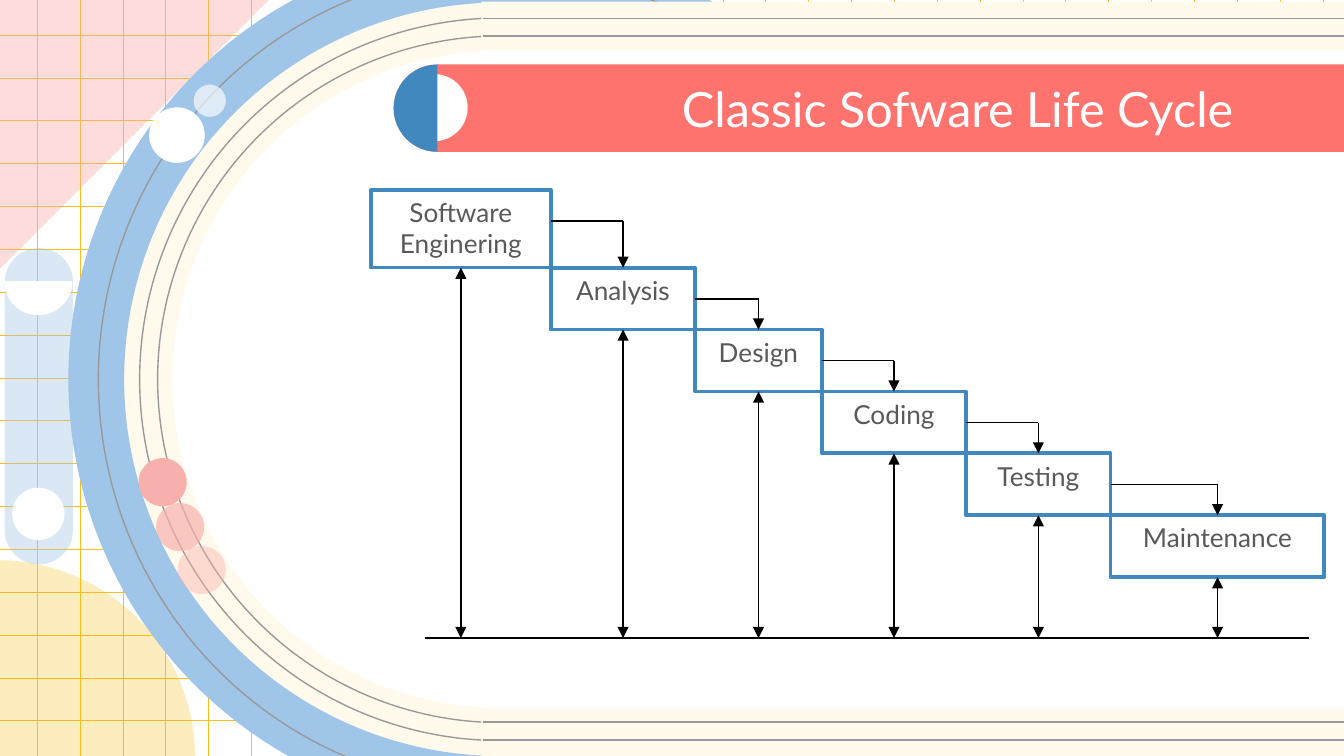
"""Build a slide showing the classic software life cycle as a descending staircase."""
import pptx
import pptx.dml.color
import pptx.enum.shapes
import pptx.enum.text
import pptx.oxml
import pptx.oxml.ns
import pptx.util

Cm = pptx.util.Cm
Pt = pptx.util.Pt
KIND = pptx.enum.shapes.MSO_SHAPE
ALIGN = pptx.enum.text.PP_ALIGN
ANCHOR = pptx.enum.text.MSO_ANCHOR

COLORS = {
    "white": "FFFFFF", "cream": "FFFAEB", "sky": "9FC5E8", "blue": "4088BE",
    "pink": "F8B0AD", "coral": "FF736E", "yellow": "FBBE18", "gray": "999999",
    "text": "595959", "black": "000000",
}
WIDTH, HEIGHT = 25.4, 14.29
STAGES = [
    ("Software Enginering", 3.40, 1.47), ("Analysis", 2.73, 1.17),
    ("Design", 2.39, 1.17), ("Coding", 2.73, 1.17),
    ("Testing", 2.73, 1.17), ("Maintenance", 4.04, 1.17),
]


def rgb(color):
    return pptx.dml.color.RGBColor.from_string(COLORS[color])


def apply(target, values):
    for name, value in values.items():
        setattr(target, name, value)


def add_element(parent, tag, **attributes):
    element = pptx.oxml.parse_xml(f"<a:{tag} {pptx.oxml.ns.nsdecls('a')}/>")
    for name, value in attributes.items():
        element.set(name, value)
    parent.append(element)


def add_figure(slide, kind, box, fill=None, alpha=100, line=None, weight=0.75, adjust=()):
    figure = slide.shapes.add_shape(kind, *map(Cm, box))
    figure.shadow.inherit = False
    for index, value in enumerate(adjust):
        figure.adjustments[index] = value
    if fill:
        figure.fill.solid()
        figure.fill.fore_color.rgb = rgb(fill)
        if alpha < 100:
            solid = figure.fill._xPr.find(pptx.oxml.ns.qn("a:solidFill"))
            add_element(solid[0], "alpha", val=str(alpha * 1000))
    else:
        figure.fill.background()
    if line:
        figure.line.color.rgb = rgb(line)
        figure.line.width = Pt(weight)
    else:
        figure.line.fill.background()
    return figure


def add_line(slide, start, end, color="black", weight=0.75, arrows=()):
    straight = pptx.enum.shapes.MSO_CONNECTOR.STRAIGHT
    stroke = slide.shapes.add_connector(straight, *map(Cm, (*start, *end)))
    stroke.line.color.rgb = rgb(color)
    stroke.line.width = Pt(weight)
    for arrow in arrows:
        add_element(stroke.line._get_or_add_ln(), arrow, type="triangle")
    add_element(stroke._element.spPr, "effectLst")


def write(holder, words, size, color, align, frame_format):
    frame = holder.text_frame
    apply(frame, {"word_wrap": True, **frame_format})
    paragraph = frame.paragraphs[0]
    paragraph.alignment = align
    run = paragraph.add_run()
    run.text = words
    apply(run.font, {"name": "Lato", "size": Pt(size)})
    run.font.color.rgb = rgb(color)


def add_grid(slide):
    for column in range(31):
        x = 0.7 + column * 0.81
        add_line(slide, (x, 0), (x, HEIGHT), "yellow", 0.19)
    for row in range(17):
        y = 0.66 + row * 0.81
        add_line(slide, (0, y), (WIDTH, y), "yellow", 0.19)


def add_rings(slide):
    rings = [
        (7.39, 7.39, {"fill": "cream"}),
        (7.44, 7.44, {"line": "sky", "weight": 18}),
        (7.86, 7.86, {"line": "sky", "weight": 18}),
        (7.61, 7.73, {"line": "gray"}),
        (6.83, 6.83, {"line": "gray"}),
        (6.49, 6.49, {"line": "gray"}),
        (6.21, 6.21, {"fill": "white"}),
    ]
    for across, down, look in rings:
        box = (9.47 - across, 7.17 - down, 2 * across, 2 * down)
        add_figure(slide, KIND.OVAL, box, **look)


def add_dots(slide):
    dots = [
        (2.82, 2.03, 1.05, "white", 100), (3.66, 1.6, 0.61, "white", 66),
        (2.62, 8.66, 0.91, "pink", 100), (2.95, 9.51, 0.91, "pink", 69),
        (3.36, 10.32, 0.91, "pink", 42),
    ]
    for left, top, size, color, alpha in dots:
        add_figure(slide, KIND.OVAL, (left, top, size, size), color, alpha)


def add_banner(slide):
    add_figure(slide, KIND.ROUNDED_RECTANGLE, (7.44, 1.22, 18.87, 1.65), "coral", adjust=[0.5])
    add_figure(slide, KIND.OVAL, (7.57, 1.4, 1.27, 1.27), "white")
    add_figure(slide, KIND.PIE, (7.44, 1.22, 1.65, 1.65), "blue", adjust=[54, 162])


def add_track(slide, top, line_offsets):
    add_figure(slide, KIND.RECTANGLE, (9.1, top, 16.92, 0.91), "cream")
    for offset in line_offsets:
        add_line(slide, (9.12, top + offset), (26.03, top + offset), "gray")


def add_pill(slide):
    add_figure(slide, KIND.ROUNDED_RECTANGLE, (0.09, 4.69, 1.29, 5.98), "sky", 38, adjust=[0.5])
    add_figure(slide, KIND.OVAL, (0.23, 9.22, 0.99, 0.99), "white")
    add_figure(slide, KIND.PIE, (0.08, 4.67, 1.29, 1.29), "white", adjust=[0, 108])


def add_title(slide):
    title = slide.shapes.add_textbox(Cm(8.56), Cm(1.52), Cm(15.01), Cm(1.04))
    margins = dict.fromkeys(
        ("margin_left", "margin_right", "margin_top", "margin_bottom"), Cm(0.25))
    write(title, "Classic Sofware Life Cycle", 26, "white", ALIGN.RIGHT,
          {"vertical_anchor": ANCHOR.MIDDLE, **margins})


def add_staircase(slide):
    left, top, ground = 7.01, 3.59, 12.06
    steps = []
    for name, width, height in STAGES:
        stage = add_figure(slide, KIND.RECTANGLE, (left, top, width, height),
                           "white", line="blue", weight=2)
        write(stage, name, 14, "text", ALIGN.CENTER, {"vertical_anchor": ANCHOR.TOP})
        steps.append((left + width / 2, left + width, top, top + height))
        left, top = left + width, top + height
    for (_, right, upper, lower), (next_middle, *_) in zip(steps, steps[1:]):
        bend = (next_middle, upper + 0.59)
        add_line(slide, (right, upper + 0.59), bend)
        add_line(slide, bend, (next_middle, lower), arrows=["tailEnd"])
    add_line(slide, (8.03, ground), (24.74, ground), weight=1)
    for middle, _, _, lower in steps:
        add_line(slide, (middle, lower), (middle, ground), arrows=["headEnd", "tailEnd"])


def main():
    deck = pptx.Presentation()
    apply(deck, {"slide_width": Cm(WIDTH), "slide_height": Cm(HEIGHT)})
    slide = deck.slides.add_slide(deck.slide_layouts[6])
    add_grid(slide)
    corner = add_figure(slide, KIND.RIGHT_TRIANGLE, (-0.08, 0, 5.16, 5.16), "pink", 42)
    corner.rotation = 90
    add_rings(slide)
    add_dots(slide)
    add_figure(slide, KIND.RECTANGLE, (9.12, 0.1, 16.92, 13.87), "white")
    add_figure(slide, KIND.PIE, (-3.78, 10.59, 7.47, 7.47), "yellow", 28, adjust=[162, 0])
    add_banner(slide)
    add_track(slide, 0.03, (0.32, 0.65))
    add_track(slide, 13.39, (0.26, 0.6))
    add_pill(slide)
    add_title(slide)
    add_staircase(slide)
    deck.save("out.pptx")


if __name__ == "__main__":
    main()
